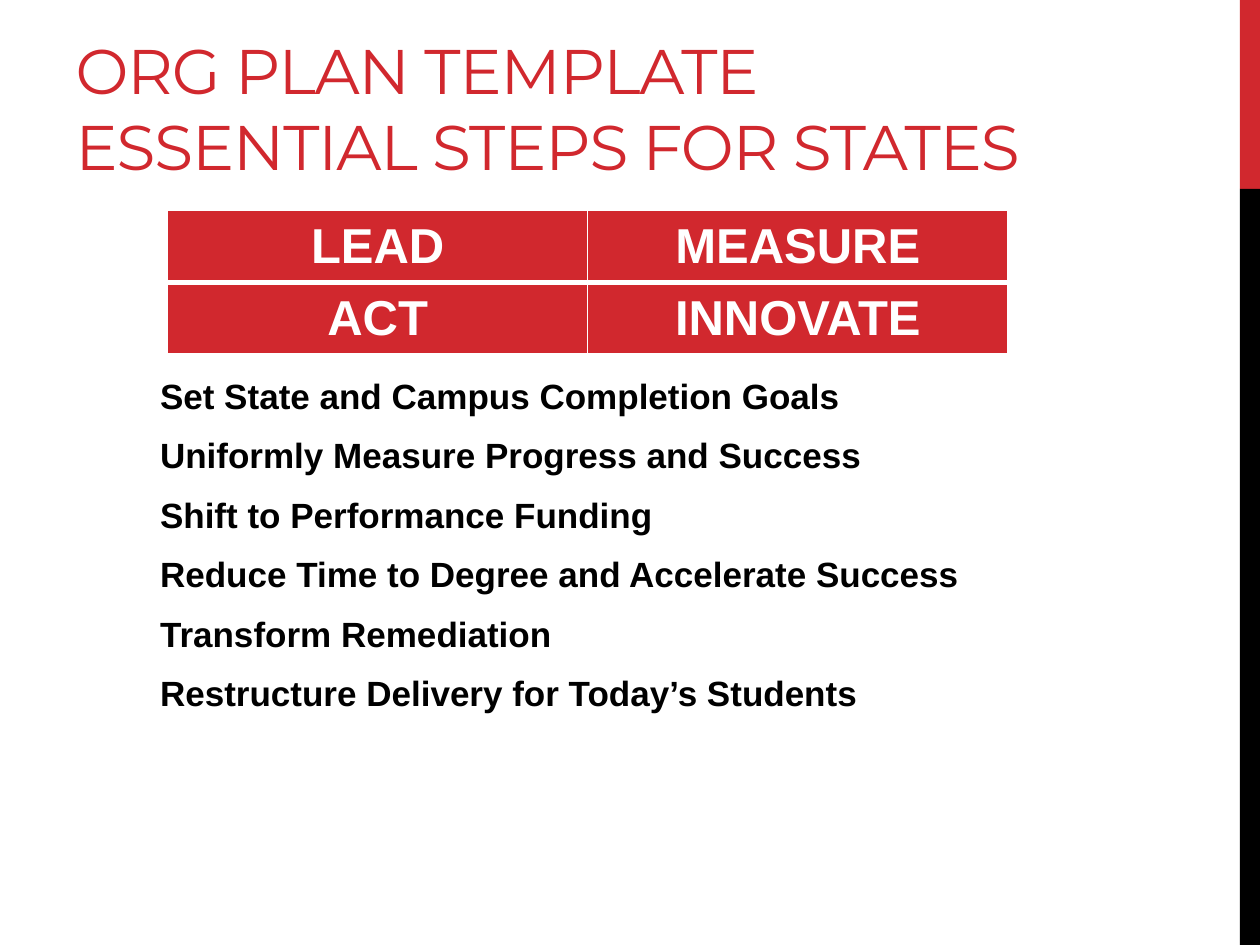
from lxml.etree import SubElement
from pptx import Presentation
from pptx.dml.color import RGBColor
from pptx.enum.shapes import MSO_SHAPE
from pptx.enum.text import MSO_ANCHOR, MSO_AUTO_SIZE, PP_ALIGN
from pptx.oxml.ns import qn
from pptx.util import Inches, Pt

RED, BLACK, WHITE = "D1282E", "000000", "FFFFFF"
TITLE = "ORG PLAN TEMPLATE\vESSENTIAL STEPS FOR STATES"
THEMES = [["LEAD", "MEASURE"], ["ACT", "INNOVATE"]]
STEPS = [
    "Set State and Campus Completion Goals",
    "Uniformly Measure Progress and Success",
    "Shift to Performance Funding",
    "Reduce Time to Degree and Accelerate Success",
    "Transform Remediation",
    "Restructure Delivery for Today’s Students",
]
SIDEBAR = [(0, 1.5, RED), (1.5, 6, BLACK)]


def color(value):
    """Turn a hex string into a colour."""
    return RGBColor.from_string(value)


def style(paragraph, name, size, value, bold, align):
    """Format one paragraph."""
    font = paragraph.font
    font.name, font.size, font.bold = name, Pt(size), bold
    font.color.rgb = color(value)
    paragraph.alignment = align


def place(shape, left, top, width, height, anchor):
    """Position a placeholder and fix its text frame."""
    shape.left, shape.top = Inches(left), Inches(top)
    shape.width, shape.height = Inches(width), Inches(height)
    shape.text_frame.word_wrap = True
    shape.text_frame.auto_size = MSO_AUTO_SIZE.NONE
    shape.text_frame.vertical_anchor = anchor


def add_borders(cell, top, bottom):
    """Give a cell white borders, with top and bottom widths in points."""
    properties = cell._tc.get_or_add_tcPr()
    for tag, width in (("lnL", 1), ("lnR", 1), ("lnT", top), ("lnB", bottom)):
        line = SubElement(properties, qn(f"a:{tag}"), w=str(Pt(width)))
        fill = SubElement(line, qn("a:solidFill"))
        SubElement(fill, qn("a:srgbClr"), val=WHITE)


def add_sidebar(slide):
    """Draw the two-colour strip on the right edge."""
    for top, height, value in SIDEBAR:
        strip = slide.shapes.add_shape(
            MSO_SHAPE.RECTANGLE, Inches(9.84), Inches(top), Inches(0.16), Inches(height))
        strip.shadow.inherit = False
        strip.fill.solid()
        strip.fill.fore_color.rgb = color(value)
        strip.line.fill.background()


def add_title(slide):
    """Fill the title placeholder."""
    title = slide.shapes.title
    place(title, 0.5, 0.17, 9, 1.33, MSO_ANCHOR.BOTTOM)
    title.text_frame.text = TITLE
    paragraph = title.text_frame.paragraphs[0]
    style(paragraph, "Montserrat", 36, RED, False, PP_ALIGN.LEFT)
    for run in paragraph.runs:
        run.font._element.set("spc", "-60")


def add_steps(slide):
    """Fill the body placeholder with the list of steps."""
    body = slide.placeholders[1]
    place(body, 1.17, 2.92, 9.17, 4.33, MSO_ANCHOR.TOP)
    body.text_frame.text = "\n".join(STEPS)
    for paragraph in body.text_frame.paragraphs:
        style(paragraph, "Arial", 20, BLACK, True, PP_ALIGN.LEFT)
        paragraph.space_before, paragraph.space_after = Pt(4), Pt(6)
        properties = paragraph._p.get_or_add_pPr()
        properties.set("marL", "0")
        properties.set("indent", "0")
        SubElement(properties, qn("a:buNone"))
        properties.append(properties.find(qn("a:defRPr")))


def add_themes(slide):
    """Build the table of themes."""
    table = slide.shapes.add_table(
        len(THEMES), len(THEMES[0]), Inches(1.33), Inches(1.67), Inches(6.67), Inches(1.14)).table
    for row, (names, borders) in enumerate(zip(THEMES, [(1, 3), (3, 1)])):
        for column, name in enumerate(names):
            cell = table.cell(row, column)
            cell.text = name
            cell.vertical_anchor = MSO_ANCHOR.MIDDLE
            style(cell.text_frame.paragraphs[0], "Arial", 28, WHITE, True, PP_ALIGN.CENTER)
            add_borders(cell, *borders)
            cell.fill.solid()
            cell.fill.fore_color.rgb = color(RED)


def main():
    """Build and save the slide."""
    presentation = Presentation()
    presentation.slide_width, presentation.slide_height = Inches(10), Inches(7.5)
    slide = presentation.slides.add_slide(presentation.slide_layouts[1])
    add_sidebar(slide)
    add_title(slide)
    add_steps(slide)
    add_themes(slide)
    presentation.save("out.pptx")


if __name__ == "__main__":
    main()
